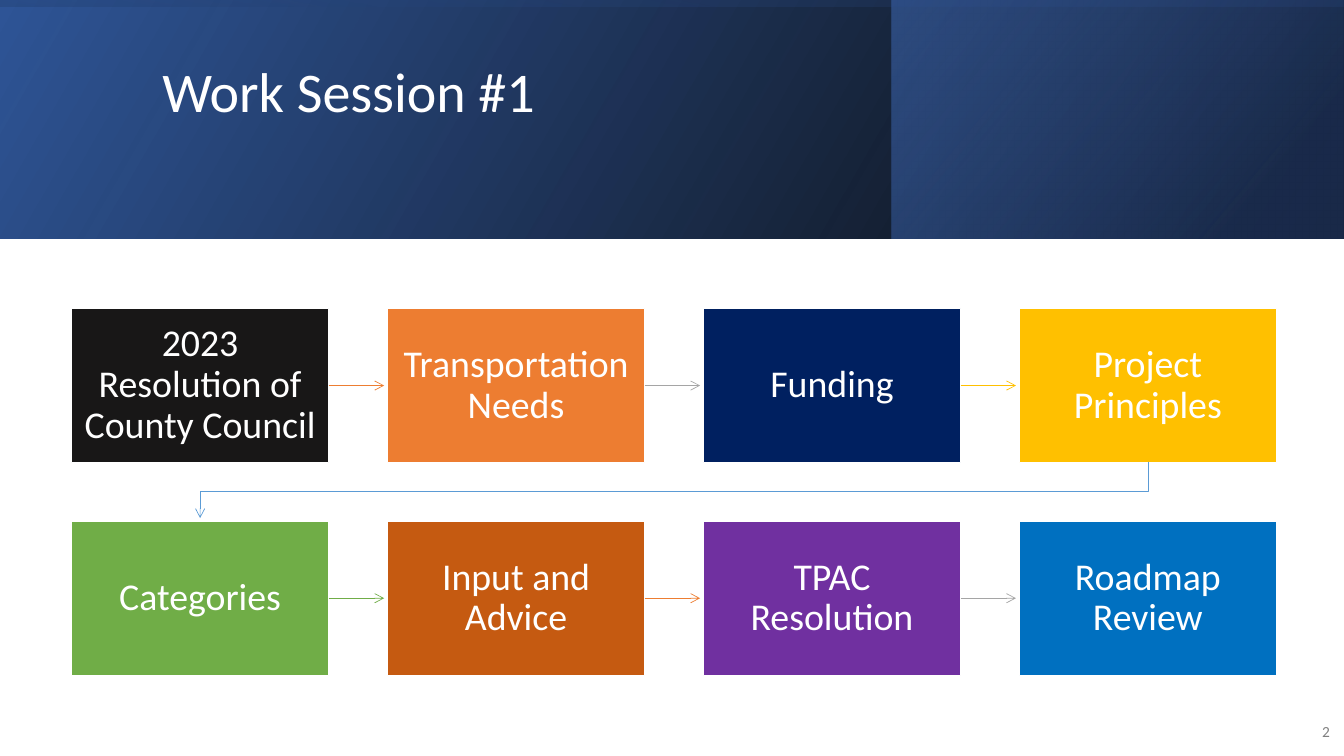
from dataclasses import dataclass
from lxml import etree
from pptx import Presentation
from pptx import util as u
from pptx.dml.color import RGBColor
from pptx.enum import shapes, text
from pptx.oxml import ns


@dataclass(frozen=True)
class Theme:
    font: str = "Calibri"
    title_size: float = 40
    box_size: float = 27
    number_size: float = 11
    white: str = "FFFFFF"
    black: str = "000000"
    grey: str = "808080"
    silver: str = "A5A5A5"
    ink: str = "181717"
    orange: str = "ED7D31"
    rust: str = "C55A11"
    navy: str = "002060"
    gold: str = "FFC000"
    green: str = "70AD47"
    purple: str = "7030A0"
    blue: str = "0070C0"
    sky: str = "5B9BD5"
    royal: str = "2F5597"
    midnight: str = "203864"
    cobalt: str = "4472C4"


T = Theme()


def write(sp, words, size, color, align, spacing=None):
    tf = sp.text_frame
    tf.text = words
    tf.word_wrap = True
    tf.auto_size = text.MSO_AUTO_SIZE.NONE
    tf.vertical_anchor = text.MSO_ANCHOR.MIDDLE
    p = tf.paragraphs[0]
    p.alignment = align
    p.line_spacing = spacing
    r = p.runs[0]
    r.font.name = T.font
    r.font.size = u.Pt(size)
    r.font.color.rgb = RGBColor.from_string(color)
    return tf


def style_arrow(sp, color):
    sp.line.color.rgb = RGBColor.from_string(color)
    sp.line.width = u.Pt(0.5)
    etree.SubElement(sp.line._get_or_add_ln(), ns.qn("a:tailEnd"), type="arrow")
    etree.SubElement(sp._element.spPr, ns.qn("a:effectLst"))


prs = Presentation()
prs.slide_width = u.Inches(13.33)
prs.slide_height = u.Inches(7.5)
s = prs.slides.add_slide(prs.slide_layouts[5])

bands = [
    ((0, 0, 13.33, 2.37), 0, 330, [(0, T.black, 96), (1, T.royal, 100)]),
    ((8.84, 0, 4.48, 2.37), 0, 320, [(0.19, T.midnight, 68), (1, T.cobalt, 48)]),
    ((5.48, -5.48, 2.37, 13.33), 270, 350, [(0.23, T.royal, 16), (0.99, T.black, 45)]),
]
for box, rotation, angle, stops in bands:
    sp = s.shapes.add_shape(shapes.MSO_SHAPE.RECTANGLE, *map(u.Inches, box))
    sp.shadow.inherit = False
    sp.line.fill.background()
    sp.rotation = rotation
    sp._element.spPr.xfrm.set("flipH", "1")
    sp.fill.gradient()
    sp.fill.gradient_angle = 360 - angle
    for stop, (position, color, _) in zip(sp.fill.gradient_stops, stops):
        stop.position = position
        stop.color.rgb = RGBColor.from_string(color)
    for clr, (_, _, opacity) in zip(sp._element.spPr.iter(ns.qn("a:srgbClr")), stops):
        etree.SubElement(clr, ns.qn("a:alpha"), val=str(opacity * 1000))

title = s.shapes.title
title.left, title.top, title.width, title.height = map(u.Inches, (1.51, 0.38, 10.63, 1.72))
tf = write(title, "Work Session #1", T.title_size, T.white, text.PP_ALIGN.LEFT, 0.9)
tf.margin_bottom = u.Inches(0.66)
s.shapes._spTree.append(title._element)

number = s.shapes.add_textbox(*map(u.Inches, (12.8, 7.06, 0.49, 0.4)))
write(number, "2", T.number_size, T.grey, text.PP_ALIGN.RIGHT)

left, top, width, height = 0.71, 3.06, 2.55, 1.53
col_step, row_step = 9.4 / 3, 2.11
steps = [
    [
        ("2023 Resolution of County Council", T.ink, T.orange),
        ("Transportation Needs", T.orange, T.silver),
        ("Funding", T.navy, T.gold),
        ("Project Principles", T.gold, None),
    ],
    [
        ("Categories", T.green, T.green),
        ("Input and Advice", T.rust, T.orange),
        ("TPAC Resolution", T.purple, T.silver),
        ("Roadmap Review", T.blue, None),
    ],
]
for row, line in enumerate(steps):
    for col, (words, fill, arrow) in enumerate(line):
        x, y = left + col * col_step, top + row * row_step
        sp = s.shapes.add_shape(
            shapes.MSO_SHAPE.RECTANGLE, *map(u.Inches, (x, y, width, height))
        )
        sp.shadow.inherit = False
        sp.fill.solid()
        sp.fill.fore_color.rgb = RGBColor.from_string(fill)
        sp.line.color.rgb = RGBColor.from_string(T.white)
        sp.line.width = u.Pt(1)
        tf = write(sp, words, T.box_size, T.white, text.PP_ALIGN.CENTER, 0.9)
        tf.margin_left = tf.margin_right = u.Inches(0.12)
        tf.margin_top = tf.margin_bottom = u.Inches(0.13)
        if arrow:
            start, mid = x + width, y + height / 2
            c = s.shapes.add_connector(
                shapes.MSO_CONNECTOR.STRAIGHT,
                *map(u.Inches, (start, mid, start + 0.55, mid)),
            )
            style_arrow(c, arrow)

first_x = left + width / 2
last_x = first_x + 3 * col_step
turn = [(last_x, 4.88), (first_x, 4.88), (first_x, 5.14)]
fb = s.shapes.build_freeform(u.Inches(last_x), u.Inches(4.58))
fb.add_line_segments([(u.Inches(x), u.Inches(y)) for x, y in turn], close=False)
sp = fb.convert_to_shape()
sp.fill.background()
style_arrow(sp, T.sky)

prs.save("out.pptx")
